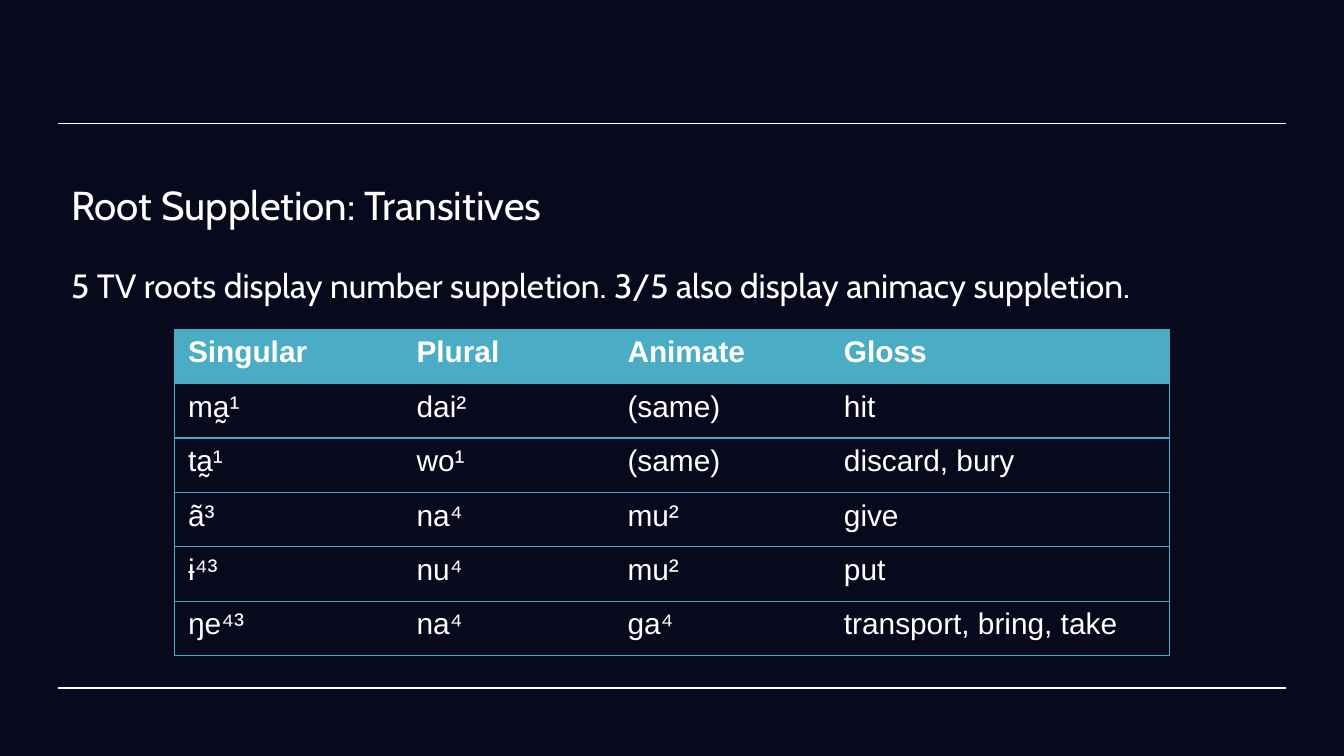
from dataclasses import dataclass

from lxml import etree
from pptx import Presentation
from pptx.dml.color import RGBColor
from pptx.enum.shapes import MSO_CONNECTOR
from pptx.enum.text import MSO_ANCHOR, MSO_AUTO_SIZE, PP_ALIGN
from pptx.oxml.ns import qn
from pptx.shapes.placeholder import SlidePlaceholder
from pptx.slide import Slide
from pptx.table import _Cell
from pptx.util import Inches, Pt

STRAIGHT = MSO_CONNECTOR.STRAIGHT
TOP = MSO_ANCHOR.TOP
NO_AUTOFIT = MSO_AUTO_SIZE.NONE
LEFT = PP_ALIGN.LEFT


@dataclass(frozen=True)
class Theme:
    background: str = "09091E"
    text: str = "FFFFFF"
    header_fill: str = "4BACC6"
    border: str = "46AAC5"
    heading_font: str = "Cabin"
    table_font: str = "Arial"
    title_size: float = 21.6
    body_size: float = 18
    table_size: float = 16
    line_width: float = 0.75


@dataclass(frozen=True)
class Box:
    left: float
    top: float
    width: float
    height: float


@dataclass(frozen=True)
class VerbRoot:
    singular: str
    plural: str
    animate: str
    gloss: str

    def cells(self) -> tuple[str, ...]:
        return self.singular, self.plural, self.animate, self.gloss


THEME = Theme()
SLIDE_WIDTH = Inches(10)
SLIDE_HEIGHT = SLIDE_WIDTH * 9 // 16
TITLE_BOX = Box(0.43, 1.24, 8.83, 0.47)
BODY_BOX = Box(0.43, 1.87, 8.98, 3.01)
TABLE_BOX = Box(1.3, 2.45, 7.4, 2.43)
COLUMN_WIDTHS = (1.7, 1.57, 1.61, 2.52)
RULE_LEFT, RULE_RIGHT = 0.43, 9.57
RULE_TOPS = (0.92, 5.12)

HEADINGS = VerbRoot("Singular", "Plural", "Animate", "Gloss")
ROOTS = (
    VerbRoot("ma̰¹", "dai²", "(same)", "hit"),
    VerbRoot("ta̰¹", "wo¹", "(same)", "discard, bury"),
    VerbRoot("ã³", "na⁴", "mu²", "give"),
    VerbRoot("ɨ⁴³", "nu⁴", "mu²", "put"),
    VerbRoot("ŋe⁴³", "na⁴", "ga⁴", "transport, bring, take"),
)


def set_font(paragraph, name: str, size: float, bold: bool = False) -> None:
    paragraph.font.name = name
    paragraph.font.size = Pt(size)
    paragraph.font.bold = bold
    paragraph.font.color.rgb = RGBColor.from_string(THEME.text)


def draw_rule(slide: Slide, top: float) -> None:
    rule = slide.shapes.add_connector(
        STRAIGHT, Inches(RULE_LEFT), Inches(top), Inches(RULE_RIGHT), Inches(top))
    rule.line.color.rgb = RGBColor.from_string(THEME.text)
    rule.line.width = Pt(THEME.line_width)
    etree.SubElement(rule._element.spPr, qn("a:effectLst"))


def fill_placeholder(holder: SlidePlaceholder, box: Box, text: str,
                     size: float, space_after: float = 0) -> None:
    holder.left, holder.top = Inches(box.left), Inches(box.top)
    holder.width, holder.height = Inches(box.width), Inches(box.height)
    frame = holder.text_frame
    frame.text = text
    frame.word_wrap = True
    frame.auto_size = NO_AUTOFIT
    frame.vertical_anchor = TOP
    frame.margin_left = frame.margin_right = Inches(0.1)
    frame.margin_top = frame.margin_bottom = Inches(0.1)
    paragraph = frame.paragraphs[0]
    properties = paragraph._p.get_or_add_pPr()
    properties.set("marL", "0")
    properties.set("indent", "0")
    etree.SubElement(properties, qn("a:buNone"))
    paragraph.alignment = LEFT
    paragraph.space_before = Pt(0)
    paragraph.space_after = Pt(space_after)
    set_font(paragraph, THEME.heading_font, size)


def set_borders(cell: _Cell, visible: dict[str, bool]) -> None:
    """Put the four edges, in schema order, ahead of the cell fill."""
    properties = cell._tc.get_or_add_tcPr()
    for position, (edge, shown) in enumerate(visible.items()):
        line = etree.Element(qn(f"a:{edge}"), w=str(Pt(THEME.line_width)))
        if shown:
            solid = etree.SubElement(line, qn("a:solidFill"))
            etree.SubElement(solid, qn("a:srgbClr"), val=THEME.border)
        else:
            etree.SubElement(line, qn("a:noFill"))
        properties.insert(position, line)


def draw_root_table(slide: Slide, box: Box, rows: tuple[VerbRoot, ...]) -> None:
    table = slide.shapes.add_table(
        len(rows), len(COLUMN_WIDTHS), Inches(box.left), Inches(box.top),
        Inches(box.width), Inches(box.height)).table
    for column, width in zip(table.columns, COLUMN_WIDTHS):
        column.width = Inches(width)
    last_column = len(COLUMN_WIDTHS) - 1
    for row_index, root in enumerate(rows):
        is_header = row_index == 0
        for column_index, text in enumerate(root.cells()):
            cell = table.cell(row_index, column_index)
            cell.text = text
            set_font(cell.text_frame.paragraphs[0], THEME.table_font,
                     THEME.table_size, is_header)
            if is_header:
                cell.fill.solid()
                cell.fill.fore_color.rgb = RGBColor.from_string(THEME.header_fill)
            else:
                cell.fill.background()
            set_borders(cell, {"lnL": column_index == 0,
                               "lnR": column_index == last_column,
                               "lnT": True, "lnB": True})


def main() -> None:
    presentation = Presentation()
    presentation.slide_width = SLIDE_WIDTH
    presentation.slide_height = SLIDE_HEIGHT
    slide = presentation.slides.add_slide(presentation.slide_layouts[1])
    slide.background.fill.solid()
    slide.background.fill.fore_color.rgb = RGBColor.from_string(THEME.background)

    # Rules above and below the content
    for top in RULE_TOPS:
        draw_rule(slide, top)

    # Title and statement
    fill_placeholder(slide.shapes.title, TITLE_BOX,
                     "Root Suppletion: Transitives", THEME.title_size)
    fill_placeholder(
        slide.placeholders[1], BODY_BOX,
        "5 TV roots display number suppletion. 3/5 also display animacy suppletion.",
        THEME.body_size, space_after=12)

    # Suppletive roots
    draw_root_table(slide, TABLE_BOX, (HEADINGS, *ROOTS))

    presentation.save("out.pptx")


if __name__ == "__main__":
    main()
